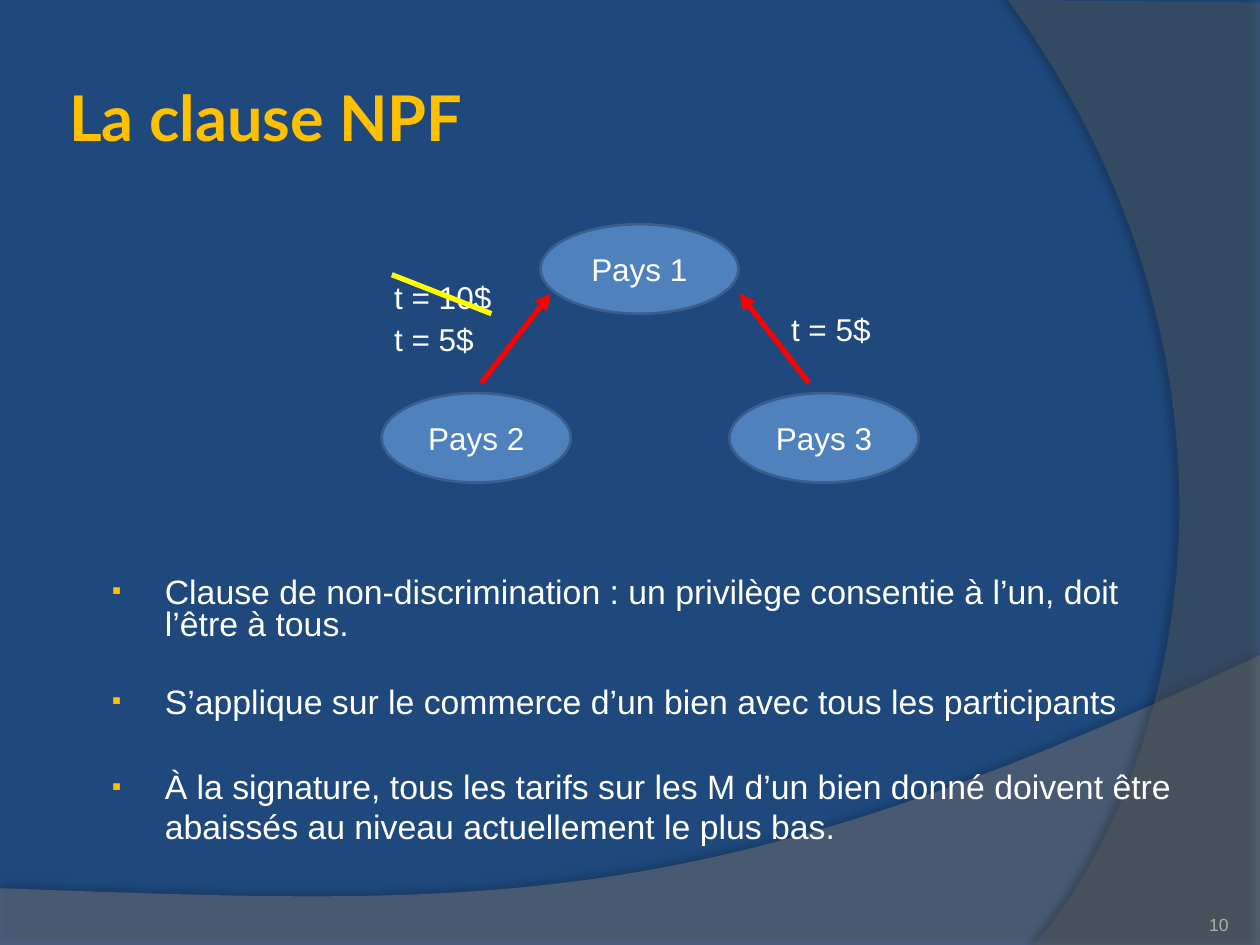
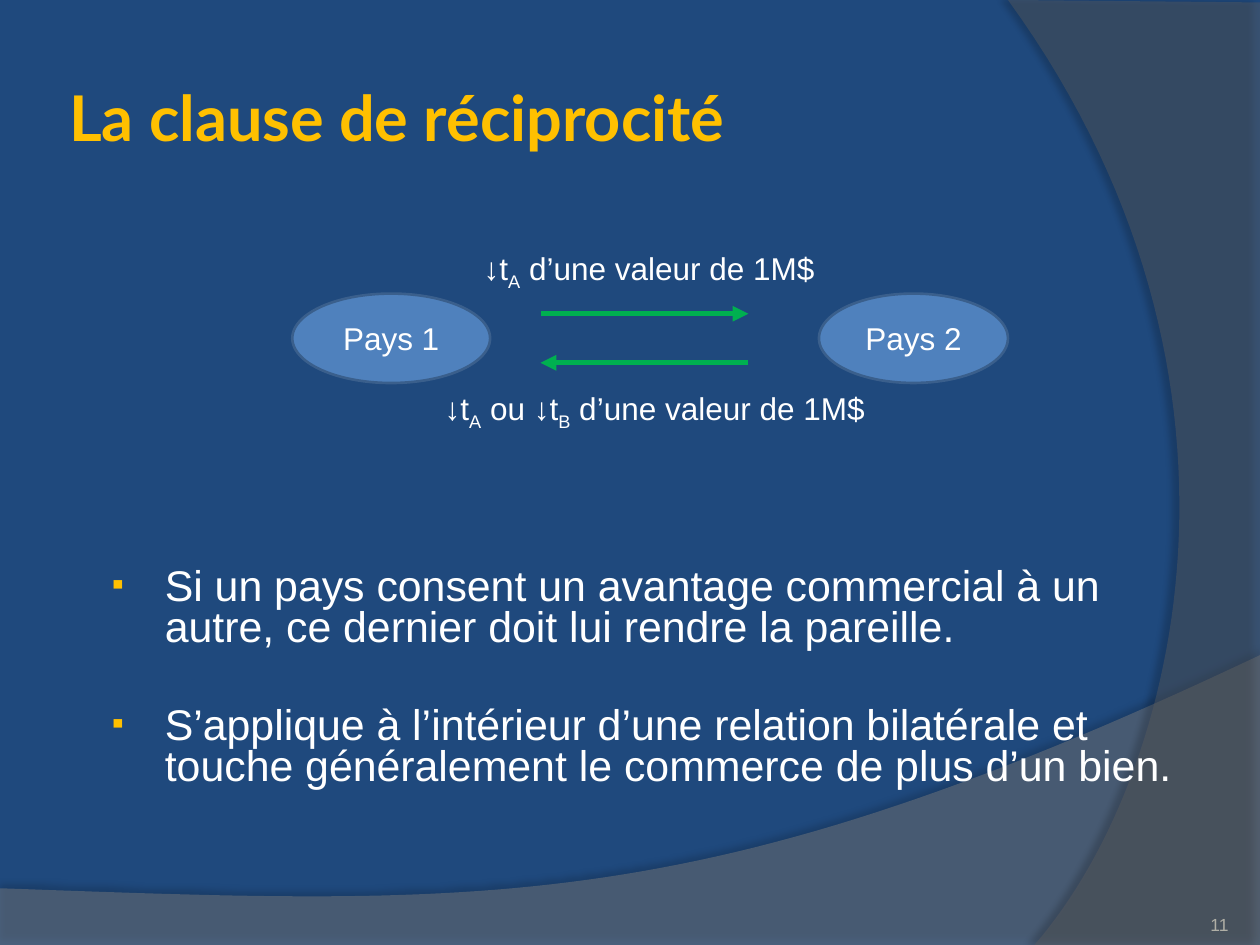
from lxml.etree import SubElement
from pptx import Presentation
from pptx.dml.color import RGBColor
from pptx.enum.shapes import MSO_CONNECTOR, MSO_SHAPE
from pptx.enum.text import MSO_ANCHOR, PP_ALIGN
from pptx.oxml.ns import qn
from pptx.util import Inches, Pt

COLORS = {
    "background": "1F497D", "title": "FFC000", "text": "FFFFFF", "number": "B0AFA6",
    "country": "4F81BD", "country_edge": "3A5F8C", "low_band": "7F7F7F",
    "side_band": "5E5E5E", "shadow": "000000",
    "red": "FF0000", "yellow": "FFFF00", "green": "00B050",
}
BODY_FONT, TITLE_FONT = "Arial", "Lato"
COUNTRY_HEIGHT, LABEL_HEIGHT = 0.71, 0.4

# Each band: straight corners, then a curve (two controls and an end) from the last corner.
BANDS = [
    {"color": "low_band", "opacity": 45, "shadow": (35, 3.5, 270),
     "corners": [(0, 7.05), (0, 7.5), (10, 7.5), (10, 5.2)],
     "curve": [(5.59, 7.29), (3.91, 7.19), (0, 7.05)]},
    {"color": "side_band", "opacity": 40, "shadow": (45, 4, 180),
     "corners": [(10, 0.02), (10, 7.5), (8.21, 7.5)],
     "curve": [(9.35, 6.19), (10.18, 3), (8, 0)]},
]

# countries: name, left, top, width; labels: text (subscripts between _), left, top, width
# lines: start, end, color, has arrowhead; bullets: text, line spacing
SLIDES = [
    {"title": "La clause NPF", "number": 10,
     "countries": [("Pays 1", 4.29, 1.78, 1.57), ("Pays 2", 3.03, 3.12, 1.5),
                   ("Pays 3", 5.79, 3.12, 1.5)],
     "labels": [("t = 10$", 3.03, 2.16, 0.98), ("t = 5$", 6.18, 2.41, 0.84),
                ("t = 5$", 3.03, 2.49, 0.84)],
     "lines": [((6.42, 3.04), (5.87, 2.33), "red", True),
               ((3.82, 3.04), (4.37, 2.33), "red", True),
               ((3.11, 2.18), (3.9, 2.49), "yellow", False)],
     "bullets_top": 4.54, "bullet_size": 19.3,
     "bullets": [
         ("Clause de non-discrimination : un privilège consentie à l’un, doit l’être à tous.", 0.8),
         ("S’applique sur le commerce d’un bien avec tous les participants", 0.8),
         ("À la signature, tous les tarifs sur les M d’un bien donné doivent être abaissés "
          "au niveau actuellement le plus bas.", 1.0)]},
    {"title": "La clause de réciprocité", "number": 11,
     "countries": [("Pays 1", 2.32, 2.33, 1.57), ("Pays 2", 6.5, 2.33, 1.5)],
     "labels": [("↓t_A_ d’une valeur de 1M$", 3.74, 1.93, 2.88),
                ("↓t_A_ ou ↓t_B_ d’une valeur de 1M$", 3.43, 3.04, 3.68)],
     "lines": [((4.29, 2.49), (5.94, 2.49), "green", True),
               ((5.94, 2.88), (4.29, 2.88), "green", True)],
     "bullets_top": 4.46, "bullet_size": 24.5,
     "bullets": [
         ("Si un pays consent un avantage commercial à un autre, ce dernier doit lui rendre "
          "la pareille.", 0.8),
         ("S’applique à l’intérieur d’une relation bilatérale et touche généralement le "
          "commerce de plus d’un bien.", 0.8)]},
]


def rgb(name):
    return RGBColor.from_string(COLORS[name])


def style(para, size, color="text", font=BODY_FONT, bold=False):
    para.font.size, para.font.name, para.font.bold = Pt(size), font, bold
    para.font.color.rgb = rgb(color)


def add_box(page, left, top, width, height, anchor=MSO_ANCHOR.TOP, inset=None, wrap=True):
    box = page.shapes.add_textbox(Inches(left), Inches(top), Inches(width), Inches(height))
    frame = box.text_frame
    frame.word_wrap, frame.vertical_anchor = wrap, anchor
    if inset is not None:
        frame.margin_left = frame.margin_right = Inches(inset)
        frame.margin_top = frame.margin_bottom = Inches(inset)
    return frame


def curve_points(start, control_1, control_2, end, steps=60):
    """Points along a cubic Bézier curve, without its start."""
    for step in range(1, steps + 1):
        t = step / steps
        weights = ((1 - t) ** 3, 3 * t * (1 - t) ** 2, 3 * t * t * (1 - t), t ** 3)
        yield tuple(sum(w * point[axis] for w, point in
                        zip(weights, (start, control_1, control_2, end))) for axis in (0, 1))


def add_band(page, band):
    corners = band["corners"]
    outline = corners + list(curve_points(corners[-1], *band["curve"]))
    points = [(Inches(x), Inches(y)) for x, y in outline]
    builder = page.shapes.build_freeform(*points[0])
    builder.add_line_segments(points[1:], close=True)
    shape = builder.convert_to_shape()
    shape.line.fill.background()
    shape.fill.solid()
    shape.fill.fore_color.rgb = rgb(band["color"])
    properties = shape._element.spPr
    fill_color = properties.find(qn("a:solidFill"))[0]
    SubElement(fill_color, qn("a:alpha"), val=str(band["opacity"] * 1000))
    opacity, distance, angle = band["shadow"]
    effects = SubElement(properties, qn("a:effectLst"))
    shadow = SubElement(effects, qn("a:outerShdw"), blurRad=str(Pt(4)), dist=str(Pt(distance)),
                        dir=str(angle * 60000), algn="ctr", rotWithShape="0")
    shadow_color = SubElement(shadow, qn("a:srgbClr"), val=COLORS["shadow"])
    SubElement(shadow_color, qn("a:alpha"), val=str(opacity * 1000))


def add_frame(page, title, number):
    """Background, bands, title and page number shared by all slides."""
    page.background.fill.solid()
    page.background.fill.fore_color.rgb = rgb("background")
    for band in BANDS:
        add_band(page, band)
    para = add_box(page, 0.5, 0.3, 9.5, 1.25, MSO_ANCHOR.MIDDLE, 0.05).paragraphs[0]
    para.text = title
    style(para, 36, "title", TITLE_FONT, True)
    para = add_box(page, 8.92, 7.02, 0.83, 0.4, MSO_ANCHOR.BOTTOM, 0).paragraphs[0]
    para.text, para.alignment = str(number), PP_ALIGN.RIGHT
    style(para, 10, "number")


def add_country(page, name, left, top, width):
    oval = page.shapes.add_shape(MSO_SHAPE.OVAL, Inches(left), Inches(top),
                                 Inches(width), Inches(COUNTRY_HEIGHT))
    oval.shadow.inherit = False
    oval.fill.solid()
    oval.fill.fore_color.rgb = rgb("country")
    oval.line.color.rgb, oval.line.width = rgb("country_edge"), Pt(1.5)
    oval.text_frame.vertical_anchor = MSO_ANCHOR.MIDDLE
    para = oval.text_frame.paragraphs[0]
    para.text, para.alignment = name, PP_ALIGN.CENTER
    style(para, 18)


def add_label(page, text, left, top, width):
    para = add_box(page, left, top, width, LABEL_HEIGHT, wrap=False).paragraphs[0]
    style(para, 18)
    for index, part in enumerate(text.split("_")):
        span = para.add_run()
        span.text = part
        if index % 2:
            span._r.get_or_add_rPr().set("baseline", "-25000")


def add_line(page, start, end, color, arrowhead):
    line = page.shapes.add_connector(MSO_CONNECTOR.STRAIGHT,
                                     *(Inches(length) for length in start + end))
    line.line.color.rgb, line.line.width = rgb(color), Pt(3)
    if arrowhead:
        SubElement(line.line._get_or_add_ln(), qn("a:tailEnd"), type="triangle")
    SubElement(line._element.spPr, qn("a:effectLst"))


def add_bullets(page, top, size, bullets):
    frame = add_box(page, 0.75, top, 8.72, 2.33)
    for index, (text, spacing) in enumerate(bullets):
        para = frame.add_paragraph() if index else frame.paragraphs[0]
        para.text, para.line_spacing = text, spacing
        para.space_before = Pt(round(1.33 * size, 1)) if index else Pt(2)
        style(para, size)
        properties = para._p.get_or_add_pPr()
        properties.set("marL", str(Inches(0.46)))
        properties.set("indent", str(Inches(-0.42)))
        marks = [SubElement(properties, qn(tag), **values) for tag, values in (
            ("a:buClr", {}), ("a:buSzPct", {"val": "80000"}),
            ("a:buFont", {"typeface": BODY_FONT}), ("a:buChar", {"char": "▪"}))]
        SubElement(marks[0], qn("a:srgbClr"), val=COLORS["title"])
        properties.append(properties.find(qn("a:defRPr")))  # must follow the bullet marks


def main():
    deck = Presentation()
    deck.slide_width, deck.slide_height = Inches(10), Inches(7.5)
    for content in SLIDES:
        page = deck.slides.add_slide(deck.slide_layouts[6])
        add_frame(page, content["title"], content["number"])
        for country in content["countries"]:
            add_country(page, *country)
        for label in content["labels"]:
            add_label(page, *label)
        for line in content["lines"]:
            add_line(page, *line)
        add_bullets(page, content["bullets_top"], content["bullet_size"], content["bullets"])
    deck.save("out.pptx")


if __name__ == "__main__":
    main()
